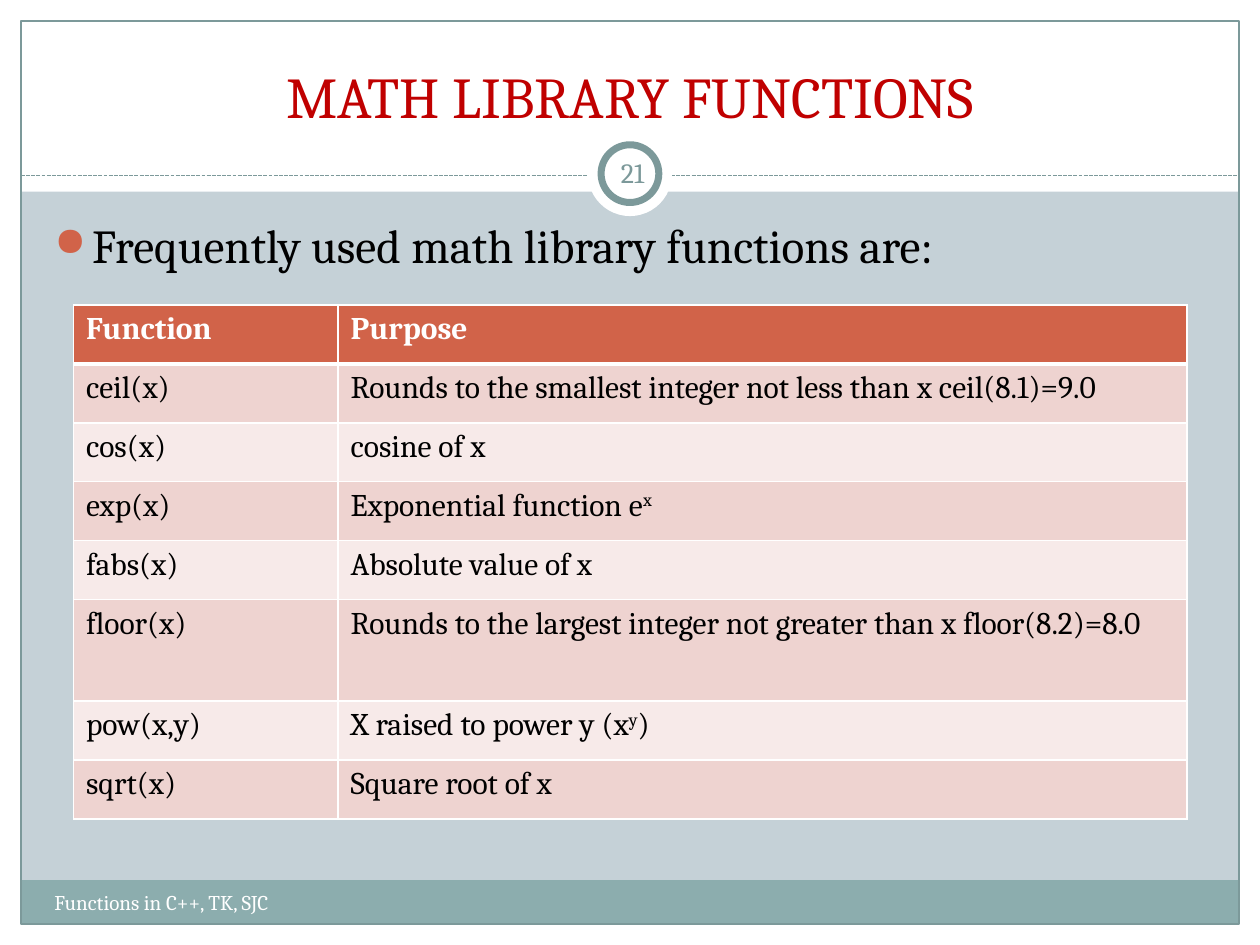
from lxml.etree import SubElement
from pptx import Presentation
from pptx.dml.color import RGBColor
from pptx.enum.dml import MSO_LINE
from pptx.enum.shapes import MSO_CONNECTOR, MSO_SHAPE
from pptx.enum.text import MSO_ANCHOR, PP_ALIGN
from pptx.oxml import parse_xml
from pptx.oxml.ns import nsdecls, qn
from pptx.util import Pt


def color(code):
    return RGBColor.from_string(code)


def write(frame, pieces, size, code, bold=False):
    frame.word_wrap = True
    para = frame.paragraphs[0]
    para.font.name = "Cambria"
    para.font.size = Pt(size)
    para.font.bold = bold
    para.font.color.rgb = color(code)
    for index, piece in enumerate(pieces):
        span = para.add_run()
        span.text = piece
        if index % 2:
            span._r.get_or_add_rPr().set("baseline", "30000")
    return para


deck = Presentation()
deck.slide_width, deck.slide_height = Pt(720), Pt(540)
page = deck.slides.add_slide(deck.slide_layouts[6])
page.background.fill.solid()
page.background.fill.fore_color.rgb = color("C5D1D7")

teal = "7C999A"
rectangle, ellipse = MSO_SHAPE.RECTANGLE, MSO_SHAPE.OVAL
shapes = [
    (rectangle, 0, 528, 720, 12, "FFFFFF", 0),
    (rectangle, 0, 0, 720, 109.5, "FFFFFF", 0),
    (rectangle, 0, 0, 12, 540, "FFFFFF", 0),
    (rectangle, 708, 0, 12, 540, "FFFFFF", 0),
    (rectangle, 12, 503, 696, 25, "8CADAE", 0),
    (rectangle, 12, 12, 696, 516, None, 0.75),
    (None, 12, 100.5, 696, 0, None, 0.75),
    (ellipse, 336, 75.5, 48, 48, "FFFFFF", 0),
    (ellipse, 343.5, 82.75, 33, 33, "FFFFFF", 4),
]
for kind, left, top, width, height, fill, weight in shapes:
    if kind is None:
        rule = page.shapes.add_connector(
            MSO_CONNECTOR.STRAIGHT, Pt(left), Pt(top), Pt(left + width), Pt(top))
        rule.line.color.rgb = color(teal)
        rule.line.width = Pt(weight)
        rule.line.dash_style = MSO_LINE.SQUARE_DOT
        SubElement(rule._element.spPr, qn("a:effectLst"))
        continue
    shape = page.shapes.add_shape(kind, Pt(left), Pt(top), Pt(width), Pt(height))
    shape.shadow.inherit = False
    if fill:
        shape.fill.solid()
        shape.fill.fore_color.rgb = color(fill)
    else:
        shape.fill.background()
    if weight:
        shape.line.color.rgb = color(teal)
        shape.line.width = Pt(weight)
    else:
        shape.line.fill.background()

title = page.shapes.add_textbox(Pt(24), Pt(18), Pt(672), Pt(60)).text_frame
title.vertical_anchor = MSO_ANCHOR.BOTTOM
write(title, ["MATH LIBRARY FUNCTIONS"], 33, "C00000").alignment = PP_ALIGN.CENTER

footer = page.shapes.add_textbox(Pt(24), Pt(505), Pt(282), Pt(28.5)).text_frame
write(footer, ["Functions in C++, TK, SJC"], 12, "FFFFFF")

number = page.shapes.add_textbox(Pt(343.5), Pt(81), Pt(36), Pt(34.5)).text_frame
number.margin_left = number.margin_right = Pt(3.6)
number.vertical_anchor = MSO_ANCHOR.MIDDLE
write(number, ["21"], 16, teal).alignment = PP_ALIGN.CENTER

body = page.shapes.add_textbox(Pt(24), Pt(120), Pt(670), Pt(360)).text_frame
para = write(body, ["Frequently used math library functions are:"], 27, "000000")
properties = para._p.get_or_add_pPr()
properties.set("marL", str(Pt(21.6)))
properties.set("indent", str(-Pt(21.6)))
bullet = [
    f'<a:buClr {nsdecls("a")}><a:srgbClr val="D16349"/></a:buClr>',
    f'<a:buSzPct {nsdecls("a")} val="85000"/>',
    f'<a:buChar {nsdecls("a")} char="●"/>',
]
for index, markup in enumerate(bullet):
    properties.insert(index, parse_xml(markup))

rows = [
    ("Function", ["Purpose"]),
    ("ceil(x)", ["Rounds to the smallest integer not less than x ceil(8.1)=9.0"]),
    ("cos(x)", ["cosine of x"]),
    ("exp(x)", ["Exponential function e", "x"]),
    ("fabs(x)", ["Absolute value of x"]),
    ("floor(x)", ["Rounds to the largest integer not greater than x floor(8.2)=8.0"]),
    ("pow(x,y)", ["X raised to power y (x", "y", ")"]),
    ("sqrt(x)", ["Square root of x"]),
]
table = page.shapes.add_table(
    len(rows), 2, Pt(42), Pt(174.25), Pt(636.4), Pt(294)).table
table.columns[0].width, table.columns[1].width = Pt(151.2), Pt(485.2)
for row, (function, purpose) in enumerate(rows):
    table.rows[row].height = Pt(58 if function == "floor(x)" else 33.7)
    header = row == 0
    fill = "D16349" if header else ("F7EAE9", "EED3D0")[row % 2]
    widths = {"lnL": 1, "lnR": 1, "lnT": 3 if row == 1 else 1, "lnB": 3 if header else 1}
    for column, pieces in enumerate([[function], purpose]):
        cell = table.cell(row, column)
        cell.fill.solid()
        cell.fill.fore_color.rgb = color(fill)
        write(cell.text_frame, pieces, 18, "FFFFFF" if header else "000000", header)
        for index, (side, width) in enumerate(widths.items()):
            cell._tc.get_or_add_tcPr().insert(index, parse_xml(
                f'<a:{side} {nsdecls("a")} w="{Pt(width)}"><a:solidFill>'
                f'<a:srgbClr val="FFFFFF"/></a:solidFill></a:{side}>'))

deck.save("out.pptx")
